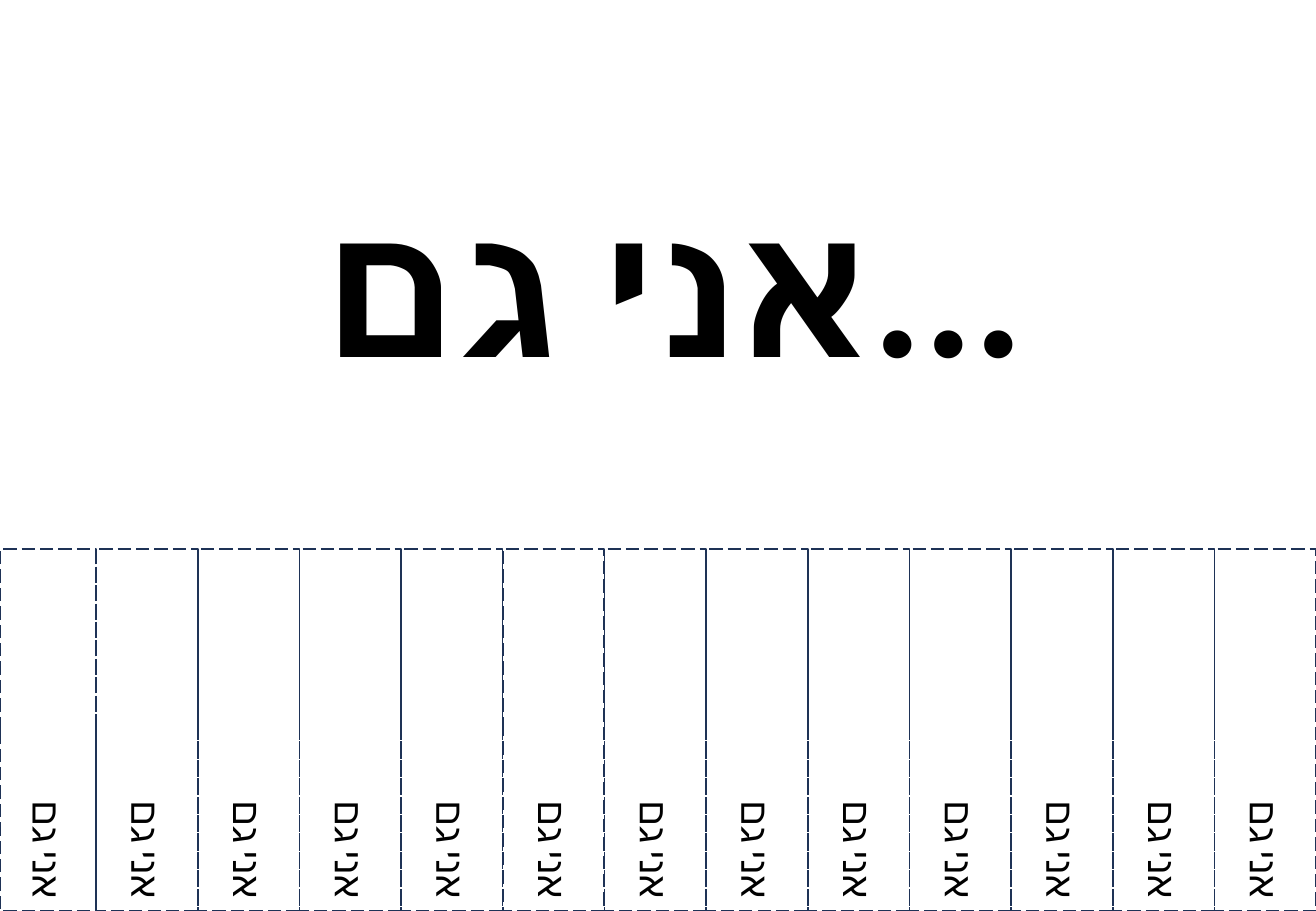
from dataclasses import dataclass

from lxml import etree
from pptx import Presentation
from pptx.dml.color import RGBColor
from pptx.enum.dml import MSO_LINE
from pptx.enum.shapes import MSO_SHAPE
from pptx.enum.text import MSO_ANCHOR, MSO_AUTO_SIZE, PP_ALIGN
from pptx.oxml.ns import qn
from pptx.slide import Slide
from pptx.text.text import TextFrame
from pptx.util import Inches, Pt

RECT = MSO_SHAPE.RECTANGLE
LONG_DASH = MSO_LINE.LONG_DASH
TOP, MIDDLE = MSO_ANCHOR.TOP, MSO_ANCHOR.MIDDLE
GROW = MSO_AUTO_SIZE.SHAPE_TO_FIT_TEXT
CENTER, RIGHT = PP_ALIGN.CENTER, PP_ALIGN.RIGHT


@dataclass(frozen=True)
class Theme:
    font: str = "Calibri"
    ink: RGBColor = RGBColor(0x00, 0x00, 0x00)
    cut_line: RGBColor = RGBColor(0x1E, 0x32, 0x56)
    title_size: float = 112.1
    strip_size: float = 22.8
    line_width: float = 1


@dataclass(frozen=True)
class Strip:
    left: float
    width: float
    text: str = "אני גם"


THEME = Theme()
SLIDE_W, SLIDE_H = 10.83, 7.5
STRIP_LENGTH = 2.98
FIRST_W = 0.79
EQUAL_STRIPS = 12
STRIP_W = (SLIDE_W - FIRST_W) / EQUAL_STRIPS
STRIPS = [Strip(0, FIRST_W)] + [
    Strip(FIRST_W + i * STRIP_W, STRIP_W) for i in range(EQUAL_STRIPS)
]


def write(tf: TextFrame, text: str, size: float, align: PP_ALIGN, bold: bool) -> None:
    p = tf.paragraphs[0]
    p.alignment = align
    r = p.add_run()
    r.text = text
    r.font.name = THEME.font
    r.font.size = Pt(size)
    r.font.bold = bold
    r.font.color.rgb = THEME.ink
    etree.SubElement(r.font._element, qn("a:cs"), typeface=THEME.font)


def add_title(s: Slide) -> None:
    sp = s.shapes.title
    sp.left, sp.top = Inches(0.56), Inches(1.34)
    sp.width, sp.height = Inches(9.99), Inches(1.99)
    tf = sp.text_frame
    tf.word_wrap = True
    tf.auto_size = GROW
    tf.vertical_anchor = TOP
    write(tf, "אני גם...", THEME.title_size, CENTER, True)


def add_strip(s: Slide, strip: Strip) -> None:
    center_x = strip.left + strip.width / 2
    center_y = SLIDE_H - STRIP_LENGTH / 2
    sp = s.shapes.add_shape(
        RECT,
        Inches(center_x - STRIP_LENGTH / 2),
        Inches(center_y - strip.width / 2),
        Inches(STRIP_LENGTH),
        Inches(strip.width),
    )
    sp.rotation = 90
    sp.shadow.inherit = False
    sp.fill.background()
    sp.line.color.rgb = THEME.cut_line
    sp.line.width = Pt(THEME.line_width)
    sp.line.dash_style = LONG_DASH
    tf = sp.text_frame
    tf.word_wrap = True
    tf.vertical_anchor = MIDDLE
    write(tf, strip.text, THEME.strip_size, RIGHT, False)


def main() -> None:
    prs = Presentation()
    prs.slide_width, prs.slide_height = Inches(SLIDE_W), Inches(SLIDE_H)
    s = prs.slides.add_slide(prs.slide_layouts[5])
    add_title(s)
    for strip in reversed(STRIPS):
        add_strip(s, strip)
    prs.save("out.pptx")


if __name__ == "__main__":
    main()
